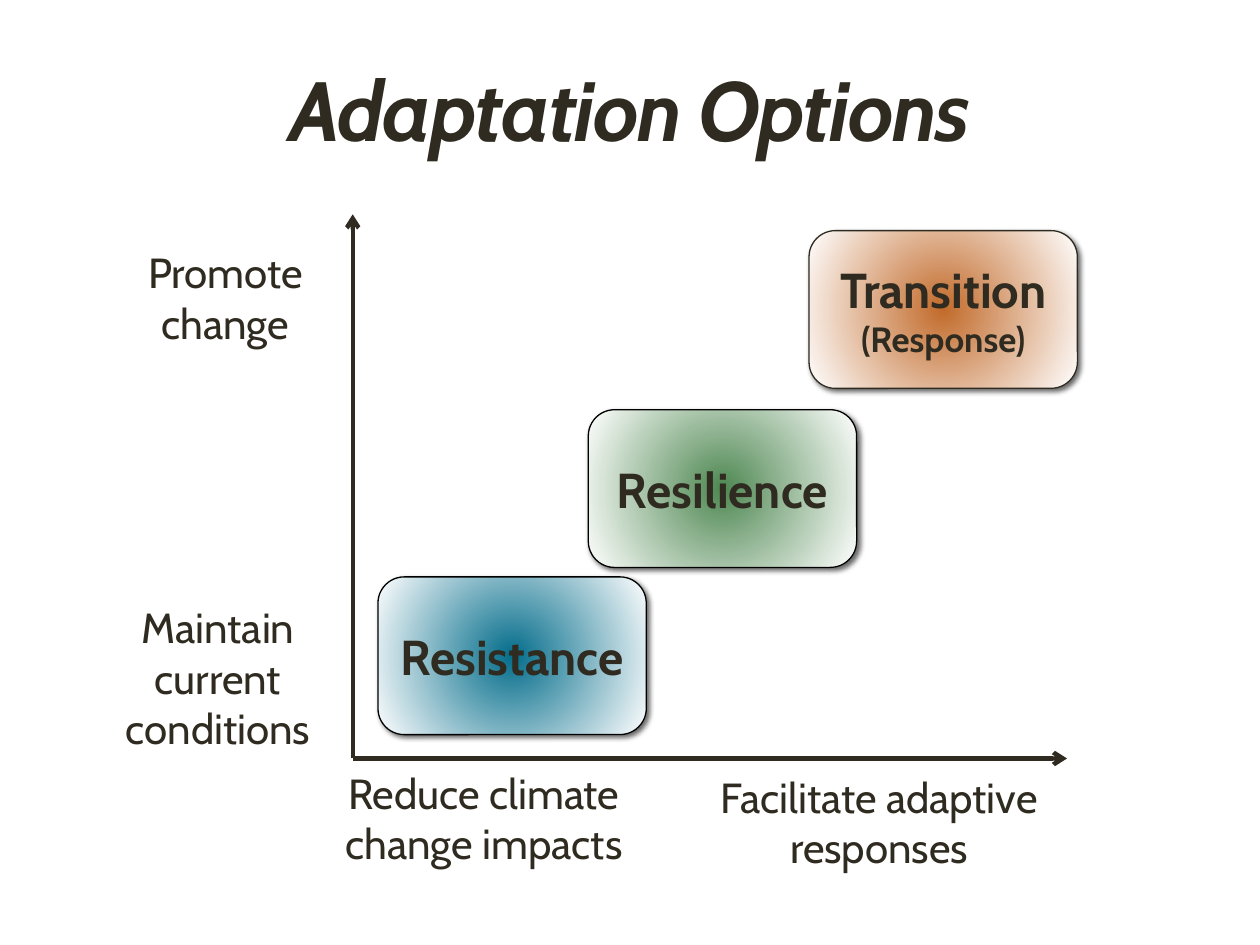
from lxml import etree
from pptx import Presentation
from pptx.dml.color import RGBColor
from pptx.enum.shapes import MSO_CONNECTOR, MSO_SHAPE
from pptx.enum.text import MSO_ANCHOR, PP_ALIGN
from pptx.oxml import parse_xml
from pptx.oxml.ns import nsdecls, qn
from pptx.util import Cm, Pt

STRAIGHT = MSO_CONNECTOR.STRAIGHT
ROUNDED = MSO_SHAPE.ROUNDED_RECTANGLE
MIDDLE = MSO_ANCHOR.MIDDLE
CENTER = PP_ALIGN.CENTER

FONT = "Cabin"
INK = "2F2B20"
BLACK = "000000"
WHITE = "FFFFFF"

ORIGIN_X, ORIGIN_Y = 7.11, 15.29
BOX_W, BOX_H = 5.41, 3.18

LABELS = [
    ("Reduce climate change impacts", 6.58, 15.34, 6.35, 2.31),
    ("Promote change", 2.13, 4.85, 4.83, 2.31),
    ("Facilitate adaptive responses", 13.94, 15.42, 7.57, 2.31),
    ("Maintain current conditions", 1.83, 12.01, 5.13, 3.33),
]

# left, top, centre colour, outline colour, lines of (text, size)
OPTIONS = [
    (7.62, 11.63, "046D8B", BLACK, [("Resistance", 28)]),
    (16.31, 4.65, "C26B2B", INK, [("Transition", 28), ("(Response)", 20)]),
    (11.86, 8.26, "4F8852", BLACK, [("Resilience", 28)]),
]


def rgb(value):
    return RGBColor.from_string(value)


def add_run(p, text, size, bold=False, italic=False):
    p.alignment = CENTER
    r = p.add_run()
    r.text = text
    r.font.name = FONT
    r.font.size = Pt(size)
    r.font.bold = bold
    r.font.italic = italic
    r.font.color.rgb = rgb(INK)
    return r


def set_title(slide, text):
    s = slide.shapes.title
    s.left, s.top, s.width, s.height = Cm(1.27), Cm(0.81), Cm(22.86), Cm(2.74)
    tf = s.text_frame
    tf.vertical_anchor = MIDDLE
    r = add_run(tf.paragraphs[0], text, 48, bold=True, italic=True)
    r.font._element.set("spc", "-100")


def add_axis(slide, end_x, end_y):
    """Draw an arrow from the chart's origin."""
    s = slide.shapes.add_connector(
        STRAIGHT, Cm(ORIGIN_X), Cm(ORIGIN_Y), Cm(end_x), Cm(end_y))
    s.line.color.rgb = rgb(INK)
    s.line.width = Pt(2.5)
    etree.SubElement(s.line._get_or_add_ln(), qn("a:tailEnd"), type="arrow")
    etree.SubElement(s._element.spPr, qn("a:effectLst"))


def add_label(slide, text, left, top, width, height):
    s = slide.shapes.add_textbox(Cm(left), Cm(top), Cm(width), Cm(height))
    tf = s.text_frame
    tf.word_wrap = True
    add_run(tf.paragraphs[0], text, 24)


def fill_radial(s, colour):
    """Fade from the colour at the centre to white at the edges."""
    s.fill.gradient()
    for stop, value in zip(s.fill.gradient_stops, (colour, WHITE)):
        stop.color.rgb = rgb(value)
    grad = s._element.spPr.find(qn("a:gradFill"))
    grad.replace(grad.find(qn("a:lin")), parse_xml(
        f'<a:path {nsdecls("a")} path="circle">'
        '<a:fillToRect l="50000" t="50000" r="50000" b="50000"/></a:path>'))


def add_shadow(s):
    s.shadow.inherit = False
    s._element.spPr.find(qn("a:effectLst")).append(parse_xml(
        f'<a:outerShdw {nsdecls("a")} blurRad="{Pt(3)}" dist="{Pt(2)}" '
        f'dir="2700000" rotWithShape="0"><a:srgbClr val="{BLACK}">'
        '<a:alpha val="60000"/></a:srgbClr></a:outerShdw>'))


def add_option(slide, left, top, colour, outline, lines):
    s = slide.shapes.add_shape(
        ROUNDED, Cm(left), Cm(top), Cm(BOX_W), Cm(BOX_H))
    fill_radial(s, colour)
    s.line.color.rgb = rgb(outline)
    s.line.width = Pt(0.75)
    add_shadow(s)
    tf = s.text_frame
    tf.vertical_anchor = MIDDLE
    for i, (text, size) in enumerate(lines):
        p = tf.add_paragraph() if i else tf.paragraphs[0]
        add_run(p, text, size, bold=True)


def main():
    prs = Presentation()
    prs.slide_width, prs.slide_height = Cm(25.4), Cm(19.05)
    slide = prs.slides.add_slide(prs.slide_layouts[5])
    set_title(slide, "Adaptation Options")
    add_axis(slide, 21.51, ORIGIN_Y)
    add_axis(slide, ORIGIN_X, 4.32)
    for label in LABELS:
        add_label(slide, *label)
    for option in OPTIONS:
        add_option(slide, *option)
    prs.save("out.pptx")


if __name__ == "__main__":
    main()
